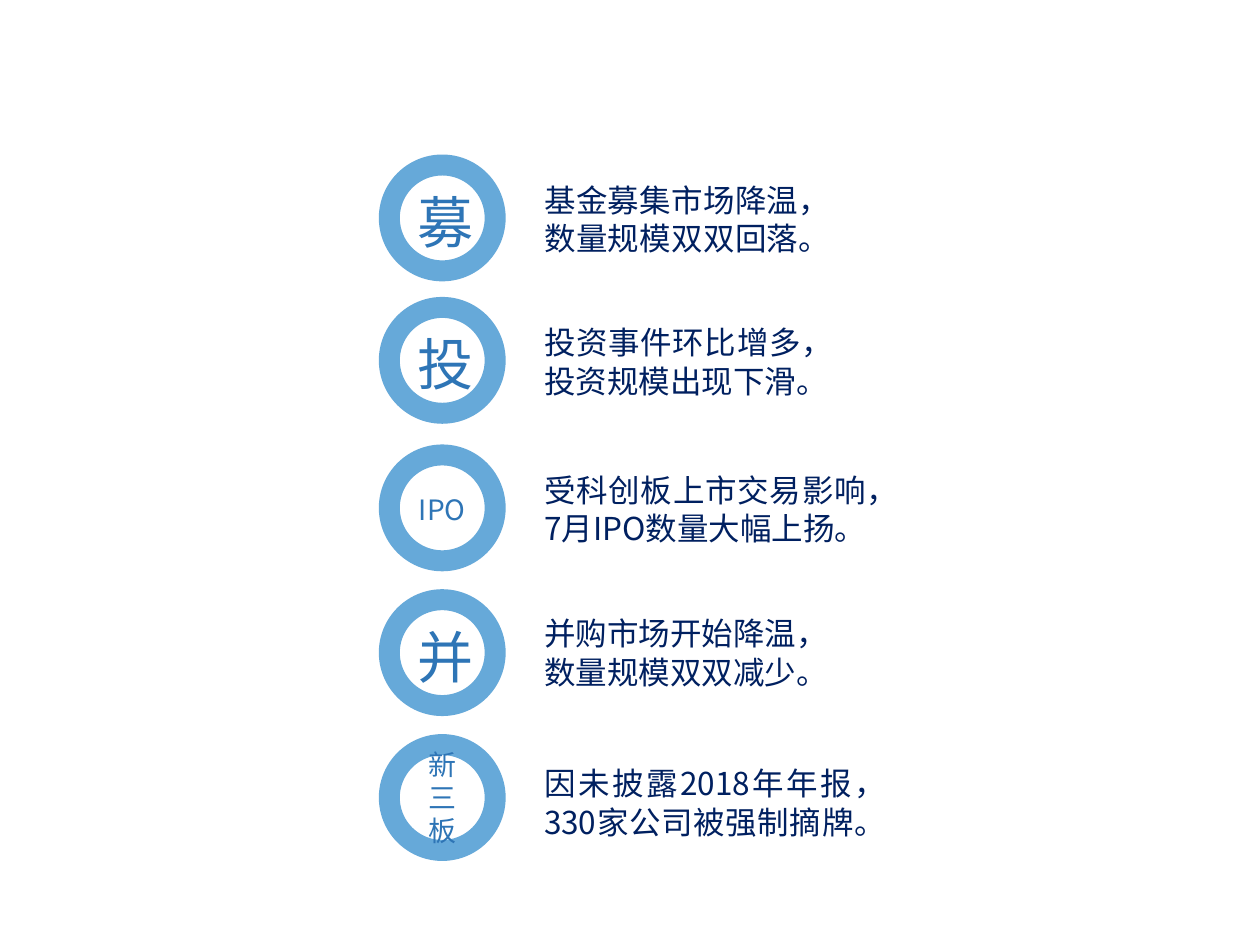
from lxml import etree
from pptx import Presentation
from pptx.dml.color import RGBColor
from pptx.enum import lang, shapes, text
from pptx.oxml import ns
from pptx.util import Pt

COLORS = {"ring": "0070C0", "label": "2E75B6", "note": "002060"}
RING_SIZE = 60.48
RING_LEFT = 222.5
NOTE_LEFT = 303.85
NOTE_HEIGHT = 51.1

# row top, label, label size, label line height, note top offset, note width, note lines
ROWS = [
    (94.3, "募", 32, 42, 5, 159.8, ["基金募集市场降温，数量规模双双回落。"]),
    (175.7, "投", 32, 42, 5, 179.3, ["投资事件环比增多，投资规模出现下滑。"]),
    (260, "IPO", 16, 21, 5, 198.7, ["受科创板上市交易影响，", "7月IPO数量大幅上扬。"]),
    (342.7, "并", 32, 42, 4.5, 209.5, ["并购市场开始降温，", "数量规模双双减少。"]),
    (425.5, "新三板", 16, 19, 7.2, 191.5, ["因未披露2018年年报，", "330家公司被强制摘牌。"]),
]


def format_para(para, size, line_height, font, color, align):
    para.alignment = align
    para.line_spacing = Pt(line_height)
    for span in para.runs:
        span.font.size = Pt(size)
        span.font.name = font
        span.font.language_id = lang.MSO_LANGUAGE_ID.SIMPLIFIED_CHINESE
        span.font.color.rgb = RGBColor.from_string(COLORS[color])
        latin = span.font._element.find(ns.qn("a:latin"))
        east_asian = etree.Element(ns.qn("a:ea"), typeface=font)
        latin.addnext(east_asian)


def add_ring(page, left, top, label, size, line_height):
    ring = page.shapes.add_shape(
        shapes.MSO_SHAPE.OVAL, Pt(left), Pt(top), Pt(RING_SIZE), Pt(RING_SIZE))
    ring.shadow.inherit = False
    ring.fill.background()
    ring.line.width = Pt(12)
    ring.line.color.rgb = RGBColor.from_string(COLORS["ring"])
    color = ring.line._ln.find(".//" + ns.qn("a:srgbClr"))
    etree.SubElement(color, ns.qn("a:alpha"), val="60000")
    frame = ring.text_frame
    frame.word_wrap = True
    frame.vertical_anchor = text.MSO_ANCHOR.MIDDLE
    frame.text = label
    format_para(frame.paragraphs[0], size, line_height, "Noto Sans CJK JP",
                "label", text.PP_ALIGN.CENTER)


def add_note(page, left, top, width, lines):
    box = page.shapes.add_textbox(Pt(left), Pt(top), Pt(width), Pt(NOTE_HEIGHT))
    frame = box.text_frame
    frame.word_wrap = True
    frame.auto_size = text.MSO_AUTO_SIZE.SHAPE_TO_FIT_TEXT
    frame.text = "\n".join(lines)
    for para in frame.paragraphs:
        format_para(para, 18, 22, "Noto Sans CJK SC", "note", text.PP_ALIGN.JUSTIFY)


def main():
    deck = Presentation()
    deck.slide_width, deck.slide_height = Pt(720), Pt(540)
    page = deck.slides.add_slide(deck.slide_layouts.get_by_name("Blank"))
    for top, label, size, line_height, offset, width, lines in ROWS:
        add_ring(page, RING_LEFT, top, label, size, line_height)
        add_note(page, NOTE_LEFT, top + offset, width, lines)
    deck.save("out.pptx")


if __name__ == "__main__":
    main()
